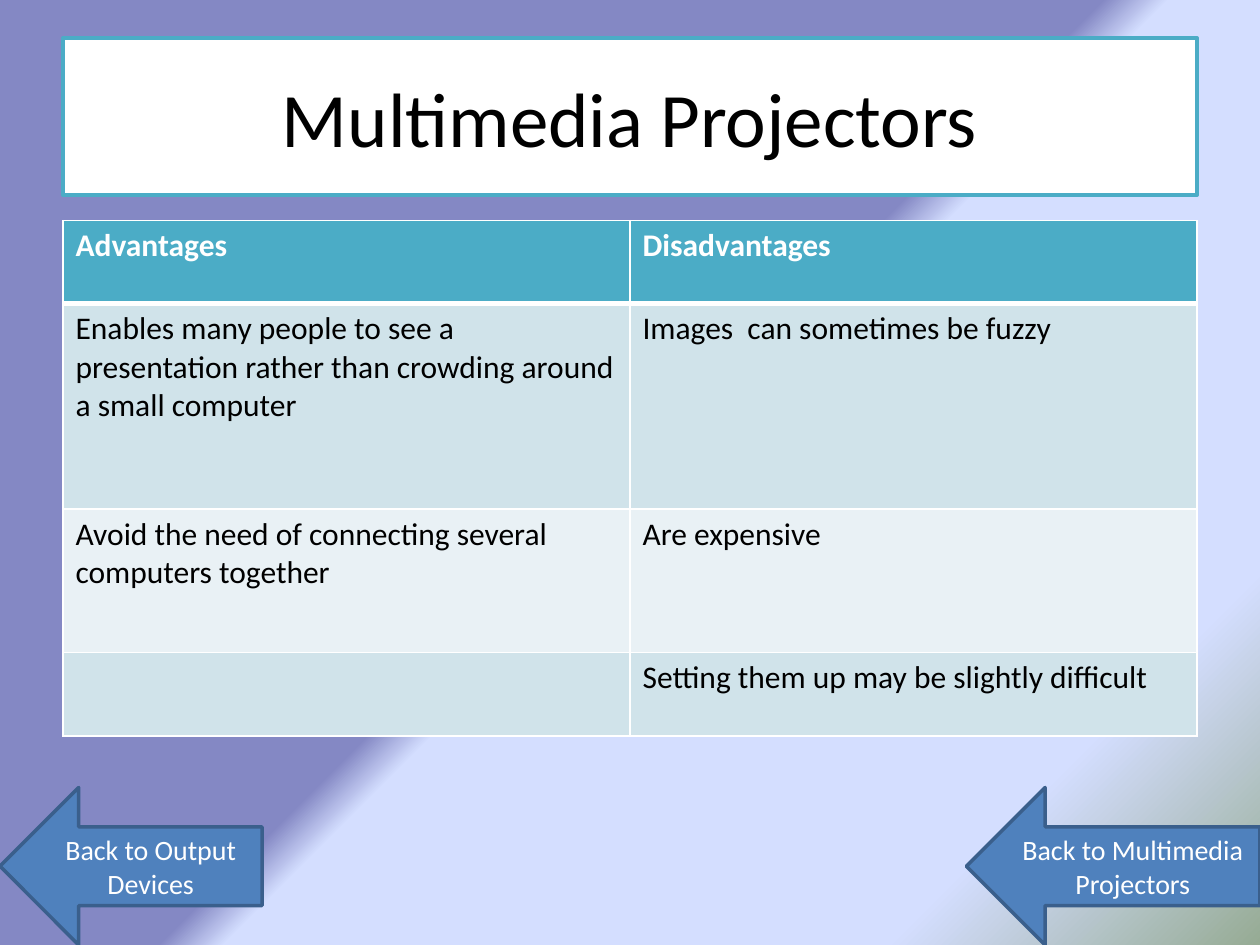
from lxml import etree
from pptx import Presentation
from pptx.dml.color import RGBColor
from pptx.enum.shapes import MSO_SHAPE
from pptx.enum.text import MSO_ANCHOR, PP_ALIGN
from pptx.oxml.ns import qn
from pptx.util import Inches, Pt

LEFT_ARROW = MSO_SHAPE.LEFT_ARROW
CENTER = PP_ALIGN.CENTER
MIDDLE = MSO_ANCHOR.MIDDLE

# Content
TITLE = "Multimedia Projectors"
TABLE_ROWS = [
    ("Advantages", "Disadvantages"),
    ("Enables many people to see a presentation rather than crowding around a small computer",
     "Images  can sometimes be fuzzy"),
    ("Avoid the need of connecting several computers together", "Are expensive"),
    ("", "Setting them up may be slightly difficult"),
]
BACK_ARROWS = [  # text, left, width
    ("Back to Output Devices", 0, 2.08),
    ("Back to Multimedia Projectors", 7.67, 2.33),
]

# Look
THEME = {
    "font": "Calibri", "title_size": 44, "table_size": 18, "arrow_size": 16,
    "dark": "000000", "light": "FFFFFF", "accent": "4BACC6",
    "bands": ("D0E3EA", "E9F1F5"), "arrow": "4F81BD", "arrow_line": "3A5F8C",
    "background": [(50, "8488C4"), (53, "D4DEFF"), (83, "D4DEFF"), (100, "96AB94")],
}

# Layout, in inches
SLIDE_WIDTH, SLIDE_HEIGHT = 10, 7.5
MARGIN = 0.5
CONTENT_WIDTH = SLIDE_WIDTH - 2 * MARGIN
TITLE_TOP, TITLE_HEIGHT = 0.3, 1.25
TABLE_TOP = 1.75
ROW_HEIGHTS = [0.66, 1.63, 1.14, 0.66]
ARROW_HEIGHT = 1.25


def set_text(text_frame, text, size, color, bold=False, align=None):
    text_frame.word_wrap = True
    paragraph = text_frame.paragraphs[0]
    paragraph.alignment = align
    paragraph.font.size = Pt(size)
    if not text:
        return
    run = paragraph.add_run()
    run.text = text
    run.font.name = THEME["font"]
    run.font.size = Pt(size)
    run.font.bold = bold
    run.font.color.rgb = RGBColor.from_string(color)


def set_box(shape, fill, line):
    shape.shadow.inherit = False
    shape.fill.solid()
    shape.fill.fore_color.rgb = RGBColor.from_string(fill)
    shape.line.color.rgb = RGBColor.from_string(line)
    shape.line.width = Pt(2)
    shape.text_frame.vertical_anchor = MIDDLE


def add_color(parent, color):
    etree.SubElement(parent, qn("a:srgbClr"), val=color)


def set_borders(cell, **widths):
    properties = cell._tc.get_or_add_tcPr()
    for side in "LRTB":
        line = etree.SubElement(properties, qn(f"a:ln{side}"), w=str(Pt(widths.get(side, 1))))
        add_color(etree.SubElement(line, qn("a:solidFill")), THEME["light"])


def set_background(slide):
    fill = slide.background.fill
    fill.gradient()
    fill.gradient_angle = 315  # counter-clockwise: runs to the lower right
    stops = slide.background._cSld.find(".//" + qn("a:gsLst"))
    for stop in list(stops):
        stops.remove(stop)
    for position, color in THEME["background"]:
        add_color(etree.SubElement(stops, qn("a:gs"), pos=str(position * 1000)), color)


def add_title(slide):
    title = slide.shapes.title
    title.left, title.top = Inches(MARGIN), Inches(TITLE_TOP)
    title.width, title.height = Inches(CONTENT_WIDTH), Inches(TITLE_HEIGHT)
    set_box(title, THEME["light"], THEME["accent"])
    set_text(title.text_frame, TITLE, THEME["title_size"], THEME["dark"], align=CENTER)


def add_comparison_table(slide):
    column_count = len(TABLE_ROWS[0])
    table = slide.shapes.add_table(
        len(TABLE_ROWS), column_count, Inches(MARGIN), Inches(TABLE_TOP),
        Inches(CONTENT_WIDTH), Inches(sum(ROW_HEIGHTS))).table
    for column in table.columns:
        column.width = Inches(CONTENT_WIDTH / column_count)
    for row_index, (texts, height) in enumerate(zip(TABLE_ROWS, ROW_HEIGHTS)):
        table.rows[row_index].height = Inches(height)
        header = row_index == 0
        fill = THEME["accent"] if header else THEME["bands"][(row_index - 1) % 2]
        for column_index, text in enumerate(texts):
            cell = table.cell(row_index, column_index)
            set_borders(cell, T=3 if row_index == 1 else 1, B=3 if header else 1)
            cell.fill.solid()
            cell.fill.fore_color.rgb = RGBColor.from_string(fill)
            set_text(cell.text_frame, text, THEME["table_size"],
                     THEME["light"] if header else THEME["dark"], bold=header)


def add_back_arrow(slide, text, left, width):
    arrow = slide.shapes.add_shape(
        LEFT_ARROW, Inches(left), Inches(SLIDE_HEIGHT - ARROW_HEIGHT),
        Inches(width), Inches(ARROW_HEIGHT))
    set_box(arrow, THEME["arrow"], THEME["arrow_line"])
    set_text(arrow.text_frame, text, THEME["arrow_size"], THEME["light"], align=CENTER)


def main():
    presentation = Presentation()
    presentation.slide_width = Inches(SLIDE_WIDTH)
    presentation.slide_height = Inches(SLIDE_HEIGHT)
    slide = presentation.slides.add_slide(presentation.slide_layouts.get_by_name("Title Only"))
    set_background(slide)
    add_title(slide)
    add_comparison_table(slide)
    for text, left, width in BACK_ARROWS:
        add_back_arrow(slide, text, left, width)
    presentation.save("out.pptx")


if __name__ == "__main__":
    main()
